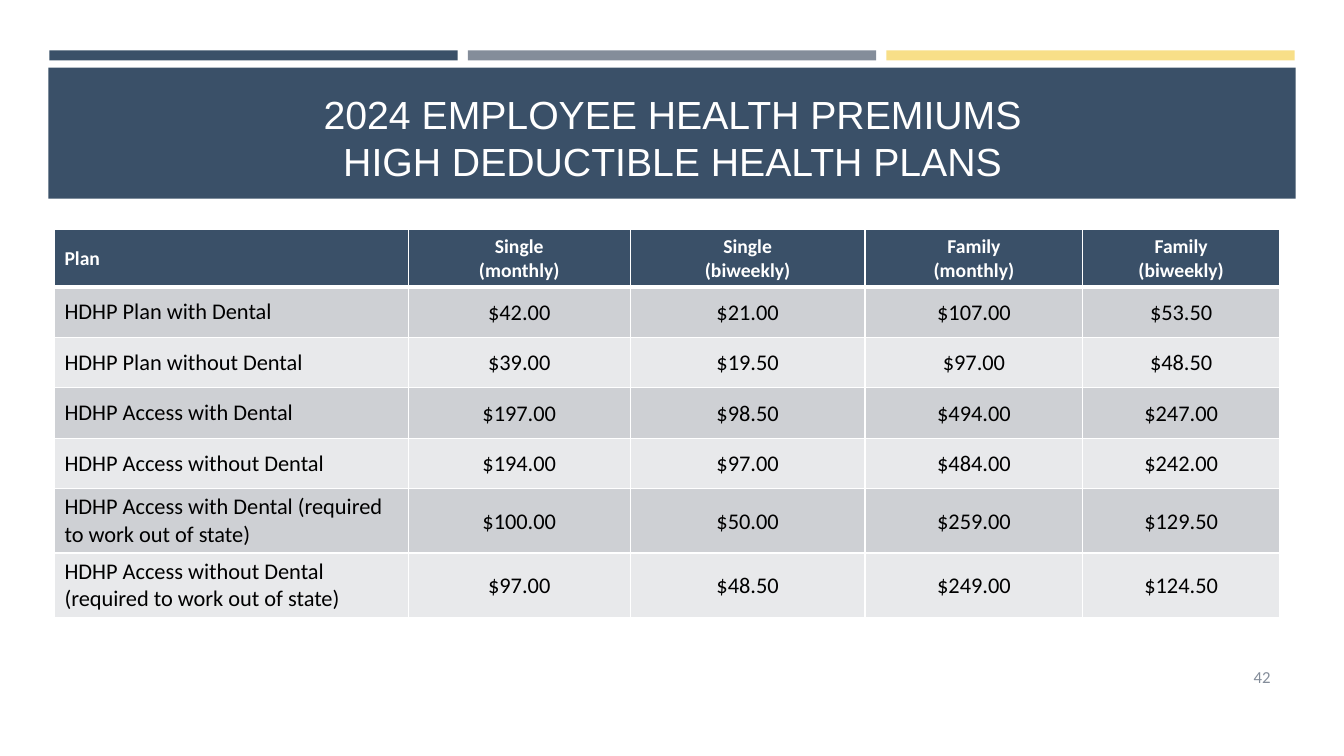
"""Build the slide of 2024 employee premiums for high deductible health plans."""
from dataclasses import dataclass

from lxml import etree
from pptx import Presentation
from pptx.dml.color import RGBColor
from pptx.enum import shapes, text
from pptx.oxml.ns import qn
from pptx.util import Inches, Pt


@dataclass(frozen=True)
class Theme:
    navy: str = "3A5068"
    gray: str = "848D9A"
    gold: str = "F8DF88"
    white: str = "FFFFFF"
    black: str = "000000"
    bands: tuple = ("CED0D4", "E8E9EB")
    head: str = "Arial"
    body: str = "Calibri"
    title: int = 28
    label: int = 14
    cell: int = 16
    page: int = 12


THEME = Theme()
TITLE = "2024 EMPLOYEE HEALTH PREMIUMS\vHIGH DEDUCTIBLE HEALTH PLANS"
PAGE = "42"
HEADS = ["Plan", "Single\n(monthly)", "Single\n(biweekly)",
         "Family\n(monthly)", "Family\n(biweekly)"]
PLANS = [
    ("HDHP Plan with Dental", "$42.00", "$21.00", "$107.00", "$53.50"),
    ("HDHP Plan without Dental", "$39.00", "$19.50", "$97.00", "$48.50"),
    ("HDHP Access with Dental", "$197.00", "$98.50", "$494.00", "$247.00"),
    ("HDHP Access without Dental", "$194.00", "$97.00", "$484.00", "$242.00"),
    ("HDHP Access with Dental (required to work out of state)",
     "$100.00", "$50.00", "$259.00", "$129.50"),
    ("HDHP Access without Dental (required to work out of state)",
     "$97.00", "$48.50", "$249.00", "$124.50"),
]
WIDTHS = [3.51, 2.2, 2.33, 2.16, 1.95]
HEIGHTS = [0.56] + [0.5] * 4 + [0.64] * 2


def paint(fill, color):
    fill.solid()
    fill.fore_color.rgb = RGBColor.from_string(color)


def bar(slide, box, color):
    shape = slide.shapes.add_shape(
        shapes.MSO_SHAPE.RECTANGLE, *map(Inches, box))
    shape.shadow.inherit = False
    paint(shape.fill, color)
    shape.line.fill.background()


def style(frame, words, font, size, color, align, bold=False):
    frame.text = words
    frame.word_wrap = True
    for para in frame.paragraphs:
        para.alignment = align
        for run in para.runs:
            run.font.name = font
            run.font.size = Pt(size)
            run.font.bold = bold
            run.font.color.rgb = RGBColor.from_string(color)


def label(slide, box, anchor, *look):
    frame = slide.shapes.add_textbox(*map(Inches, box)).text_frame
    style(frame, *look)
    frame.vertical_anchor = anchor
    return frame


def border(cell, base):
    props = cell._tc.get_or_add_tcPr()
    for spot, (side, width) in enumerate(
            [("L", 1), ("R", 1), ("T", 1), ("B", base)]):
        line = etree.Element(qn("a:ln" + side), w=str(Pt(width)))
        fill = etree.SubElement(line, qn("a:solidFill"))
        etree.SubElement(fill, qn("a:srgbClr"), val=THEME.white)
        props.insert(spot, line)


def premiums(slide):
    rows = [HEADS] + PLANS
    box = (0.54, 2.28, sum(WIDTHS), sum(HEIGHTS))
    table = slide.shapes.add_table(
        len(rows), len(HEADS), *map(Inches, box)).table
    for col, width in zip(table.columns, WIDTHS):
        col.width = Inches(width)
    for i, (row, height) in enumerate(zip(rows, HEIGHTS)):
        table.rows[i].height = Inches(height)
        top = i == 0
        for j, words in enumerate(row):
            cell = table.cell(i, j)
            align = text.PP_ALIGN.CENTER if j else text.PP_ALIGN.LEFT
            style(cell.text_frame, words, THEME.body,
                  THEME.label if top else THEME.cell,
                  THEME.white if top else THEME.black, align, top)
            cell.vertical_anchor = text.MSO_ANCHOR.MIDDLE
            if j and not top:
                cell.margin_left = cell.margin_right = Inches(0.01)
                cell.margin_top = Inches(0.01)
                cell.margin_bottom = 0
            paint(cell.fill, THEME.navy if top else THEME.bands[(i - 1) % 2])
            border(cell, 3 if top else 1)


def main():
    deck = Presentation()
    deck.slide_width, deck.slide_height = Inches(13.33), Inches(7.5)
    slide = deck.slides.add_slide(deck.slide_layouts[6])
    for i, color in enumerate([THEME.navy, THEME.gray, THEME.gold]):
        bar(slide, (0.49 + 4.15 * i, 0.5, 4.05, 0.1), color)
    bar(slide, (0.48, 0.67, 12.37, 1.3), THEME.navy)
    title = label(slide, (0.64, 0.77, 12.06, 1.11), text.MSO_ANCHOR.BOTTOM,
                  TITLE, THEME.head, THEME.title, THEME.white,
                  text.PP_ALIGN.CENTER)
    title.paragraphs[0].line_spacing = Pt(34)
    premiums(slide)
    label(slide, (11.55, 6.51, 1.15, 0.4), text.MSO_ANCHOR.MIDDLE,
          PAGE, THEME.body, THEME.page, THEME.gray, text.PP_ALIGN.RIGHT)
    deck.save("out.pptx")


if __name__ == "__main__":
    main()
